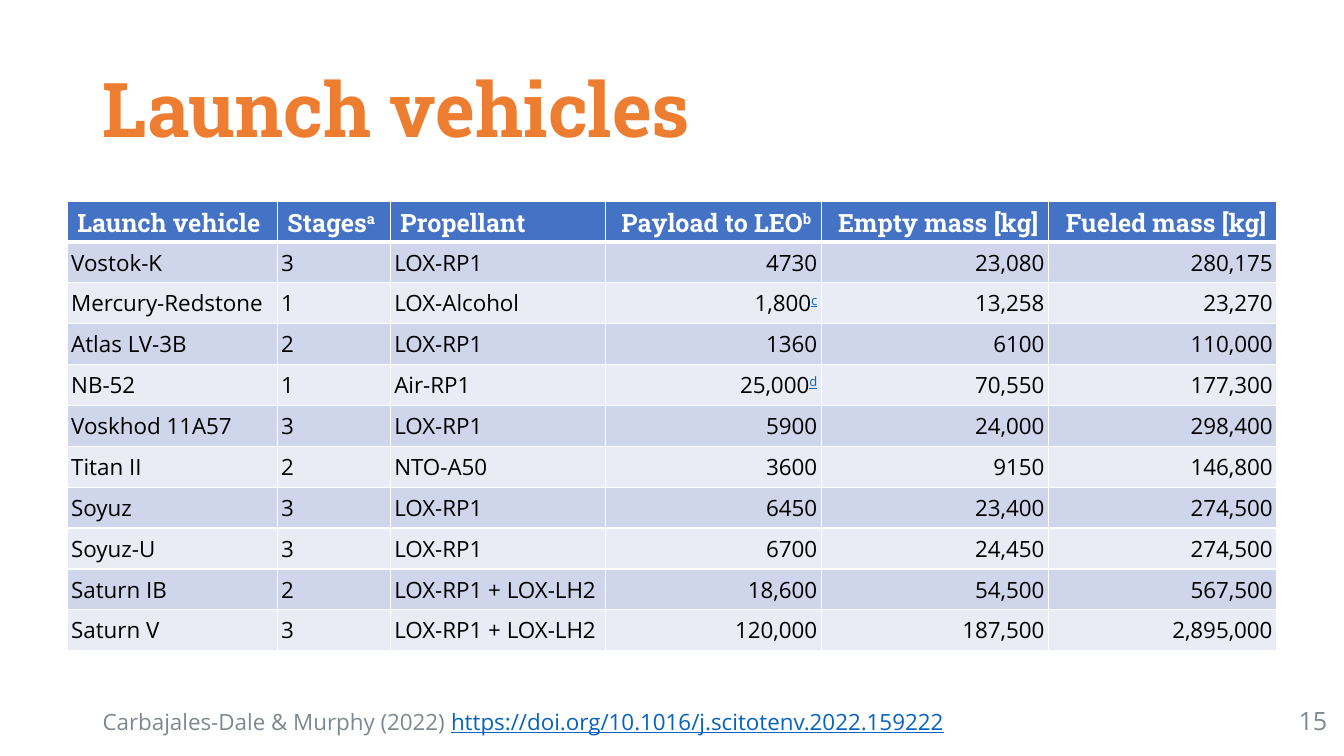
import pptx
import pptx.dml.color
import pptx.enum.text
import pptx.oxml
import pptx.oxml.ns
import pptx.util

WIDTH, HEIGHT = pptx.util.Inches(13.33), pptx.util.Inches(7.5)
ALIGN = pptx.enum.text.PP_ALIGN
MIDDLE = pptx.enum.text.MSO_ANCHOR.MIDDLE
HEADING_FONT, BODY_FONT = "Roboto Slab", "Open Sans"
COLORS = {
    "title": "ED7D31", "muted": "7F888F", "link": "0563C1", "text": "000000",
    "header": "4472C4", "odd": "CFD5EA", "even": "E9EBF5", "white": "FFFFFF",
}
COLUMN_WEIGHTS = [2.08, 1.12, 2.13, 2.14, 2.25, 2.26]
FIRST_NUMBER_COLUMN = 3
HEADERS = ["Launch vehicle", "Stages^a", "Propellant", "Payload to LEO^b",
           "Empty mass [kg]", "Fueled mass [kg]"]
VEHICLES = [
    ["Vostok-K", "3", "LOX-RP1", "4730", "23,080", "280,175"],
    ["Mercury-Redstone", "1", "LOX-Alcohol", "1,800^c", "13,258", "23,270"],
    ["Atlas LV-3B", "2", "LOX-RP1", "1360", "6100", "110,000"],
    ["NB-52", "1", "Air-RP1", "25,000^d", "70,550", "177,300"],
    ["Voskhod 11A57", "3", "LOX-RP1", "5900", "24,000", "298,400"],
    ["Titan II", "2", "NTO-A50", "3600", "9150", "146,800"],
    ["Soyuz", "3", "LOX-RP1", "6450", "23,400", "274,500"],
    ["Soyuz-U", "3", "LOX-RP1", "6700", "24,450", "274,500"],
    ["Saturn IB", "2", "LOX-RP1 + LOX-LH2", "18,600", "54,500", "567,500"],
    ["Saturn V", "3", "LOX-RP1 + LOX-LH2", "120,000", "187,500", "2,895,000"],
]


def share_box(left, top, width, height):
    """Turn shares of the slide's size into a box of lengths."""
    return (int(left * WIDTH), int(top * HEIGHT),
            int(width * WIDTH), int(height * HEIGHT))


def rgb(name):
    """Look up a named colour."""
    return pptx.dml.color.RGBColor.from_string(COLORS[name])


def add_span(para, text, font, size, color, bold=False, underline=False):
    """Add one formatted run to a paragraph."""
    span = para.add_run()
    span.text = text
    span.font.name = font
    span.font.size = pptx.util.Pt(size)
    span.font.color.rgb = rgb(color)
    span.font.bold = bold
    span.font.underline = underline
    return span


def add_title(page, box):
    """Place the title placeholder in its box."""
    title = page.shapes.title
    title.left, title.top, title.width, title.height = box
    title.text_frame.vertical_anchor = MIDDLE
    title.text_frame.word_wrap = True
    para = title.text_frame.paragraphs[0]
    para.alignment = ALIGN.LEFT
    para.line_spacing = 0.9
    add_span(para, "Launch vehicles", HEADING_FONT, 54, "title", bold=True)


def add_text_box(page, box, alignment):
    """Add a wrapping text box and return its paragraph."""
    frame = page.shapes.add_textbox(*box).text_frame
    frame.word_wrap = True
    frame.vertical_anchor = MIDDLE
    para = frame.paragraphs[0]
    para.alignment = alignment
    return para


def add_citation(page, box):
    """Place the source of the figures."""
    para = add_text_box(page, box, ALIGN.LEFT)
    add_span(para, "Carbajales-Dale & Murphy (2022) ", BODY_FONT, 16, "muted")
    add_span(para, "https://doi.org/10.1016/j.scitotenv.2022.159222",
             BODY_FONT, 16, "link", underline=True)


def add_page_number(page, box):
    """Place the page number."""
    add_span(add_text_box(page, box, ALIGN.RIGHT), "15", BODY_FONT, 18, "muted")


def set_borders(cell, top, bottom):
    """Draw white borders, in points, around a cell."""
    properties = cell._tc.get_or_add_tcPr()
    widths = {"lnL": 1, "lnR": 1, "lnT": top, "lnB": bottom}
    for index, (tag, width) in enumerate(widths.items()):
        line = pptx.oxml.parse_xml(
            f'<a:{tag} {pptx.oxml.ns.nsdecls("a")} w="{pptx.util.Pt(width)}">'
            f'<a:solidFill><a:srgbClr val="{COLORS["white"]}"/></a:solidFill>'
            f'</a:{tag}>')
        properties.insert(index, line)


def fill_cell(cell, text, row, column):
    """Write and format one cell of the vehicle table."""
    is_header = row == 0
    cell.fill.solid()
    cell.fill.fore_color.rgb = rgb(
        "header" if is_header else "odd" if row % 2 else "even")
    set_borders(cell, 3 if row == 1 else 1, 3 if is_header else 1)
    if not is_header:
        cell.vertical_anchor = MIDDLE
        inset = pptx.util.Inches(0.04)
        cell.margin_left = cell.margin_right = inset
        cell.margin_top = cell.margin_bottom = inset
    para = cell.text_frame.paragraphs[0]
    para.alignment = ALIGN.RIGHT if column >= FIRST_NUMBER_COLUMN else ALIGN.LEFT
    font, size, color = ((HEADING_FONT, 18, "white") if is_header
                         else (BODY_FONT, 16, "text"))
    value, _, note = text.partition("^")
    add_span(para, value, font, size, color, bold=is_header)
    if note:
        span = add_span(para, note, font, size, "white" if is_header else "link",
                        bold=is_header, underline=not is_header)
        span._r.get_or_add_rPr().set("baseline", "30000")


def add_vehicle_table(page, box):
    """Place the table of launch vehicles in its box."""
    rows = [HEADERS] + VEHICLES
    table = page.shapes.add_table(len(rows), len(HEADERS), *box).table
    for column, weight in zip(table.columns, COLUMN_WEIGHTS):
        column.width = int(box[2] * weight / sum(COLUMN_WEIGHTS))
    for row, texts in enumerate(rows):
        table.rows[row].height = box[3] // len(rows)
        for column, text in enumerate(texts):
            fill_cell(table.cell(row, column), text, row, column)


def main():
    """Build and save the deck."""
    deck = pptx.Presentation()
    deck.slide_width, deck.slide_height = WIDTH, HEIGHT
    page = deck.slides.add_slide(deck.slide_layouts.get_by_name("Title Only"))
    page.background.fill.solid()
    page.background.fill.fore_color.rgb = rgb("white")
    add_title(page, share_box(0.069, 0.053, 0.863, 0.193))
    add_citation(page, share_box(0.069, 0.929, 0.65, 0.05))
    add_vehicle_table(page, share_box(0.05, 0.266, 0.9, 0.595))
    add_page_number(page, share_box(0.77, 0.927, 0.225, 0.053))
    deck.save("out.pptx")


if __name__ == "__main__":
    main()
